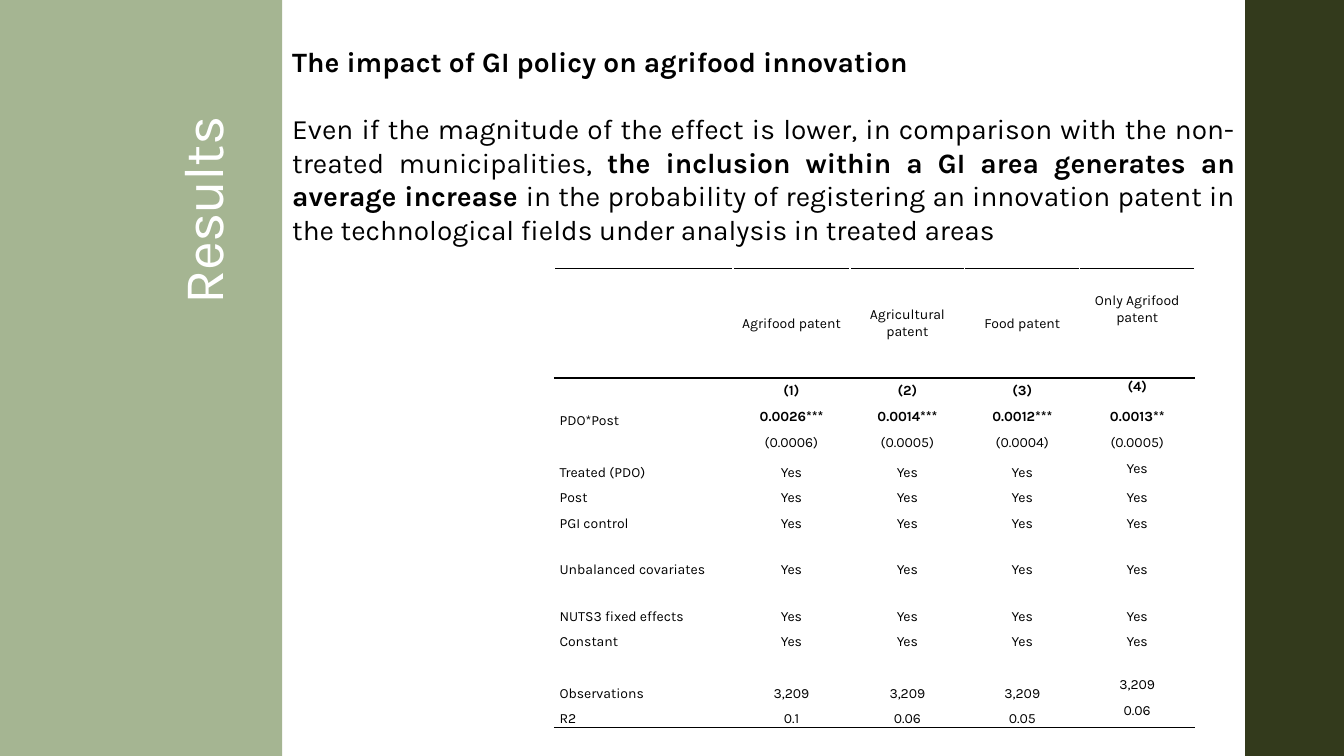
from lxml import etree
from pptx import Presentation
from pptx.dml.color import RGBColor
from pptx.enum.shapes import MSO_SHAPE
from pptx.enum.text import MSO_ANCHOR, MSO_AUTO_SIZE, PP_ALIGN
from pptx.oxml.ns import qn
from pptx.util import Inches, Pt

RECT = MSO_SHAPE.RECTANGLE
TOP, MIDDLE, BOTTOM = MSO_ANCHOR.TOP, MSO_ANCHOR.MIDDLE, MSO_ANCHOR.BOTTOM
LEFT, CENTER, RIGHT, JUSTIFY = (PP_ALIGN.LEFT, PP_ALIGN.CENTER,
                                PP_ALIGN.RIGHT, PP_ALIGN.JUSTIFY)
GROW, FIXED = MSO_AUTO_SIZE.SHAPE_TO_FIT_TEXT, MSO_AUTO_SIZE.NONE

FONT = "Karla"
BLACK, WHITE, SAGE, OLIVE = "000000", "FFFFFF", "A5B592", "333A1C"

# Table content
YES = ["Yes"] * 4
ROWS = [
    ["", "Agrifood patent", "Agricultural patent", "Food patent",
     "Only Agrifood patent"],
    ["", "(1)", "(2)", "(3)", "(4)"],
    ["PDO*Post", "0.0026***", "0.0014***", "0.0012***", "0.0013**"],
    ["", "(0.0006)", "(0.0005)", "(0.0004)", "(0.0005)"],
    ["Treated (PDO)", *YES],
    ["Post", *YES],
    ["PGI control", *YES],
    ["Unbalanced covariates", *YES],
    ["NUTS3 fixed effects", *YES],
    ["Constant", *YES],
    [""] * 5,
    ["Observations"] + ["3,209"] * 4,
    ["R2", "0.1", "0.06", "0.05", "0.06"],
]
WIDTHS = [1.77, 1.16, 1.14, 1.14, 1.14]
HEIGHT = 4.56
TALL = {0: 1.09, 7: 0.46, 8: 0.46}
BOLD = (1, 2)
RULES = {0: ("lnT", "lnB"), 1: ("lnT",), len(ROWS) - 1: ("lnB",)}
LAST = {1: TOP, 4: MIDDLE, 11: TOP, 12: TOP}  # anchors of the last column


def color(code):
    return RGBColor.from_string(code)


def apply(target, values):
    for name, value in values.items():
        setattr(target, name, value)


def place(shape, box):
    sides = ("left", "top", "width", "height")
    apply(shape, dict(zip(sides, map(Inches, box))))


def write(para, text, size, code=BLACK, bold=False):
    run = para.add_run()
    run.text = text
    apply(run.font, {"name": FONT, "size": Pt(size), "bold": bold})
    run.font.color.rgb = color(code)
    return run


def panel(slide, box, code):
    shape = slide.shapes.add_shape(RECT, *map(Inches, box))
    shape.shadow.inherit = False
    shape.fill.solid()
    shape.fill.fore_color.rgb = color(code)
    shape.line.fill.background()


def title(slide, text, box):
    shape = slide.shapes.title
    place(shape, box)
    shape.rotation = 270
    apply(shape.text_frame, {"vertical_anchor": BOTTOM, "word_wrap": True,
                             "auto_size": FIXED})
    para = shape.text_frame.paragraphs[0]
    apply(para, {"alignment": RIGHT, "line_spacing": 0.9})
    run = write(para, text, 40, WHITE)
    run.font._element.set("spc", "-50")
    # Bring the title in front of the panels
    slide.shapes._spTree.append(shape._element)


def prose(slide, box, head, parts):
    frame = slide.shapes.add_textbox(*map(Inches, box)).text_frame
    apply(frame, {"word_wrap": True, "auto_size": GROW})
    write(frame.paragraphs[0], head, 20, bold=True)
    para = frame.add_paragraph()
    apply(para, {"alignment": JUSTIFY, "space_before": Pt(24)})
    for text, bold in parts:
        write(para, text, 20, bold=bold)


def border(cell, side):
    props = cell._tc.get_or_add_tcPr()
    line = etree.SubElement(props, qn("a:" + side), w=str(Pt(1)))
    fill = etree.SubElement(line, qn("a:solidFill"))
    etree.SubElement(fill, qn("a:srgbClr"), val=BLACK)


def anchor(row, col):
    if col == 4 and row in LAST:
        return LAST[row]
    return MIDDLE if col and row < 4 else BOTTOM


def fill_cell(cell, text, row, col):
    for side in RULES.get(row, ()):
        border(cell, side)
    cell.fill.background()
    # The last heading sits higher than the others
    lift = 0.28 if (row, col) == (0, 4) else 0
    apply(cell, {"margin_left": Inches(0.05), "margin_right": Inches(0.05),
                 "margin_top": 0, "margin_bottom": Inches(lift),
                 "vertical_anchor": anchor(row, col)})
    para = cell.text_frame.paragraphs[0]
    apply(para, {"alignment": CENTER if col else LEFT,
                 "line_spacing": 1.07, "space_after": Pt(8)})
    if text:
        write(para, text, 10, bold=row in BOLD and col > 0)
    else:
        etree.SubElement(para._p, qn("a:endParaRPr"), sz="1000")


def results(slide, left, top):
    frame = slide.shapes.add_table(
        len(ROWS), len(WIDTHS), Inches(left), Inches(top),
        Inches(sum(WIDTHS)), Inches(HEIGHT))
    table = frame.table
    apply(table, {"first_row": False, "horz_banding": False})
    for col, width in zip(table.columns, WIDTHS):
        col.width = Inches(width)
    short = (HEIGHT - sum(TALL.values())) / (len(ROWS) - len(TALL))
    for row, texts in enumerate(ROWS):
        table.rows[row].height = Inches(TALL.get(row, short))
        for col, text in enumerate(texts):
            fill_cell(table.cell(row, col), text, row, col)


def main():
    deck = Presentation()
    apply(deck, {"slide_width": Inches(13.33), "slide_height": Inches(7.5)})
    slide = deck.slides.add_slide(deck.slide_layouts[5])

    # Background and side panels
    panel(slide, (0, 0, 13.33, 7.5), WHITE)
    panel(slide, (0, 0, 2.8, 7.5), SAGE)
    title(slide, "Results", (-1.45, 2.75, 5.53, 2.14))
    panel(slide, (12.35, 0, 0.98, 7.5), OLIVE)

    # Findings
    results(slide, 5.5, 2.66)
    prose(slide, (2.8, 0.39, 9.55, 2.12),
          "The impact of GI policy on agrifood innovation", [
              ("Even if the magnitude of the effect is lower, in comparison "
               "with the non-treated municipalities, ", False),
              ("the inclusion within a GI area generates an average "
               "increase ", True),
              ("in the probability of registering an innovation patent in "
               "the technological fields under analysis in treated areas",
               False)])
    deck.save("out.pptx")


if __name__ == "__main__":
    main()
